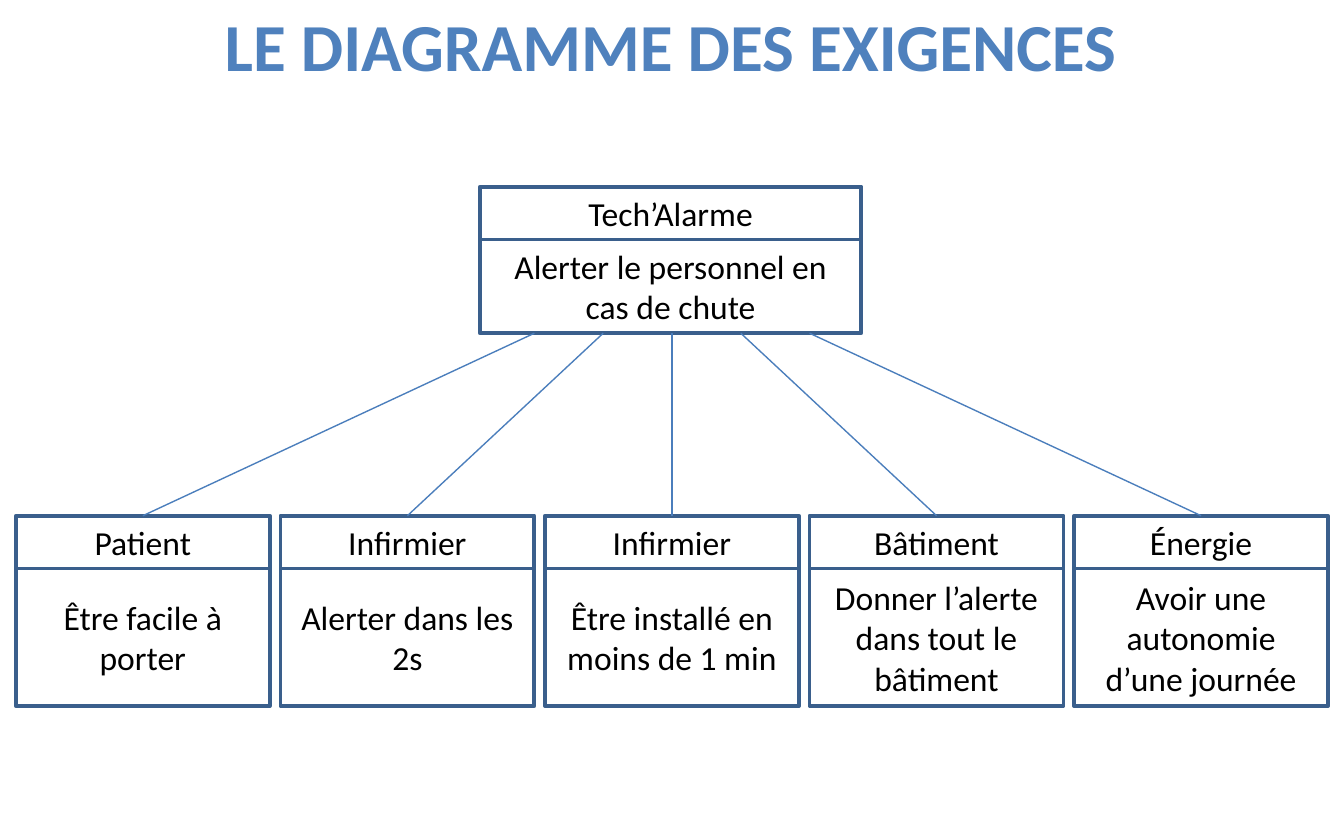
from lxml import etree
from pptx import Presentation, util as u
from pptx.dml.color import RGBColor
from pptx.enum import shapes, text
from pptx.oxml import ns

TITLE_BLUE = RGBColor(0x4F, 0x81, 0xBD)
BORDER_BLUE = RGBColor(0x3A, 0x5F, 0x8C)
LINK_BLUE = RGBColor(0x4B, 0x7E, 0xBC)
BLACK = RGBColor(0, 0, 0)

REQUIREMENTS = [
    ("Patient", "Être facile à porter"),
    ("Infirmier", "Alerter dans les 2s"),
    ("Infirmier", "Être installé en moins de 1 min"),
    ("Bâtiment", "Donner l’alerte dans tout le bâtiment"),
    ("Énergie", "Avoir une autonomie d’une journée"),
]
HEADER_HEIGHT = 1
ROOT_LEFT, ROOT_TOP, ROOT_WIDTH, ROOT_BODY = 9.07, 3.53, 7.21, 1.77
CARD_LEFT, CARD_TOP, CARD_WIDTH, CARD_BODY = 0.3, 9.75, 4.8, 2.6
CARD_PITCH = 5
LINK_LEFT, LINK_PITCH = 10.1, 1.3


class Diagram:
    """Draws requirement diagram elements on one slide in a shared style."""

    title_format = {"name": "Calibri", "size": u.Pt(36), "bold": True}
    label_format = {"name": "Calibri", "size": u.Pt(18), "bold": False}

    def __init__(self, page):
        self.page = page

    def label(self, box, words, formats, color):
        frame = box.text_frame
        frame.word_wrap = True
        para = frame.paragraphs[0]
        para.alignment = text.PP_ALIGN.CENTER
        span = para.add_run()
        span.text = words
        for name, value in formats.items():
            setattr(span.font, name, value)
        span.font.color.rgb = color

    def title(self, words, *bounds):
        box = self.page.shapes.add_textbox(*map(u.Cm, bounds))
        self.label(box, words, self.title_format, TITLE_BLUE)

    def cell(self, words, *bounds):
        box = self.page.shapes.add_shape(shapes.MSO_SHAPE.RECTANGLE, *map(u.Cm, bounds))
        box.shadow.inherit = False
        box.fill.background()
        box.line.color.rgb = BORDER_BLUE
        box.line.width = u.Pt(2)
        box.text_frame.vertical_anchor = text.MSO_ANCHOR.MIDDLE
        self.label(box, words, self.label_format, BLACK)

    def requirement(self, header, body, left, top, width, body_height):
        self.cell(header, left, top, width, HEADER_HEIGHT)
        self.cell(body, left, top + HEADER_HEIGHT, width, body_height)

    def link(self, *ends):
        line = self.page.shapes.add_connector(shapes.MSO_CONNECTOR.STRAIGHT, *map(u.Cm, ends))
        line.line.color.rgb = LINK_BLUE
        line.line.width = u.Pt(0.75)
        etree.SubElement(line._element.spPr, ns.qn("a:effectLst"))


def main():
    deck = Presentation()
    deck.slide_width, deck.slide_height = u.Cm(25.4), u.Cm(15.88)
    diagram = Diagram(deck.slides.add_slide(deck.slide_layouts[6]))
    diagram.title("LE DIAGRAMME DES EXIGENCES", -0.05, -0.05, 25.45, 1.8)
    diagram.requirement("Tech’Alarme", "Alerter le personnel en cas de chute",
                        ROOT_LEFT, ROOT_TOP, ROOT_WIDTH, ROOT_BODY)
    root_bottom = ROOT_TOP + HEADER_HEIGHT + ROOT_BODY
    for index, (header, body) in enumerate(REQUIREMENTS):
        left = CARD_LEFT + index * CARD_PITCH
        diagram.requirement(header, body, left, CARD_TOP, CARD_WIDTH, CARD_BODY)
        diagram.link(LINK_LEFT + index * LINK_PITCH, root_bottom,
                     left + CARD_WIDTH / 2, CARD_TOP)
    deck.save("out.pptx")


if __name__ == "__main__":
    main()
